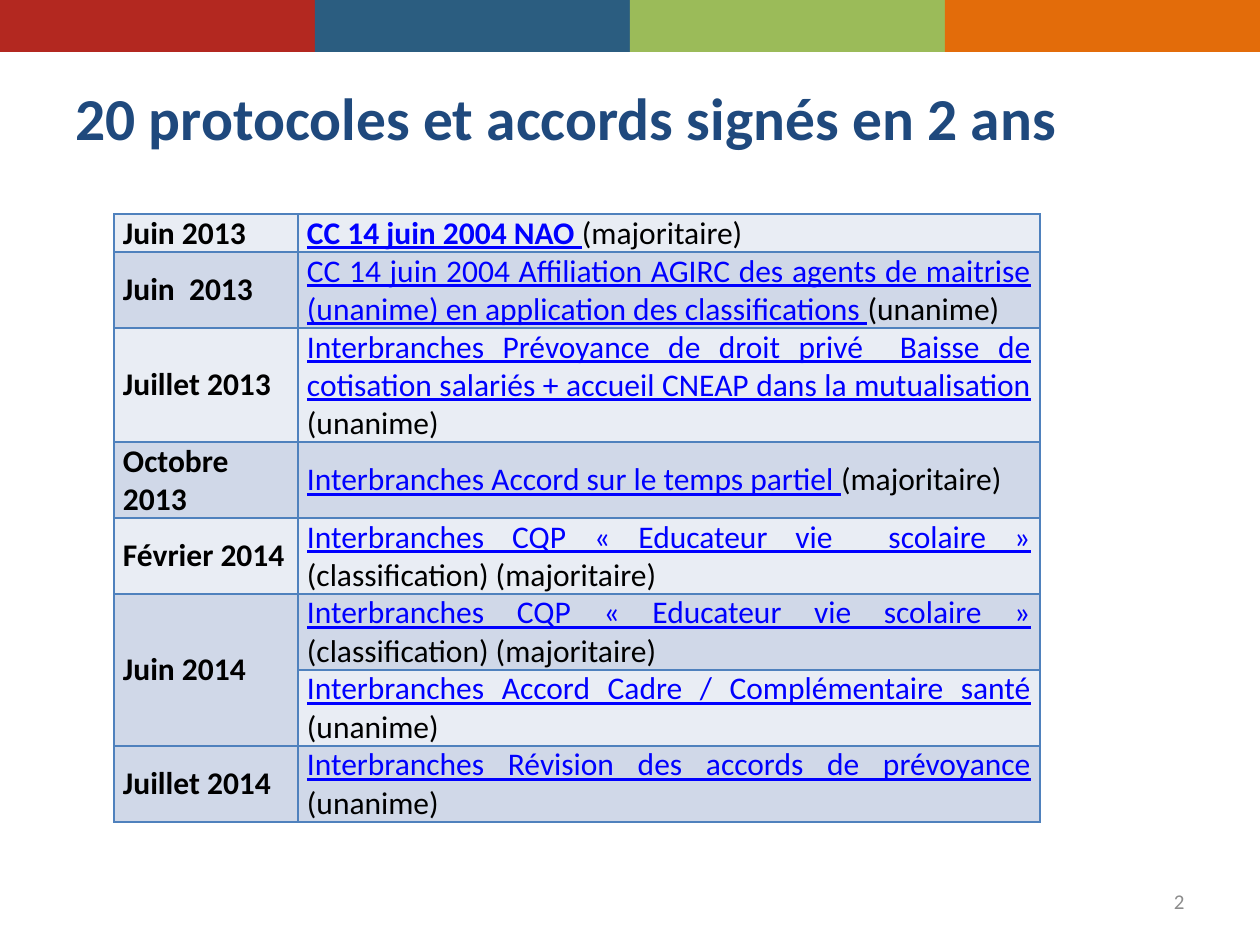
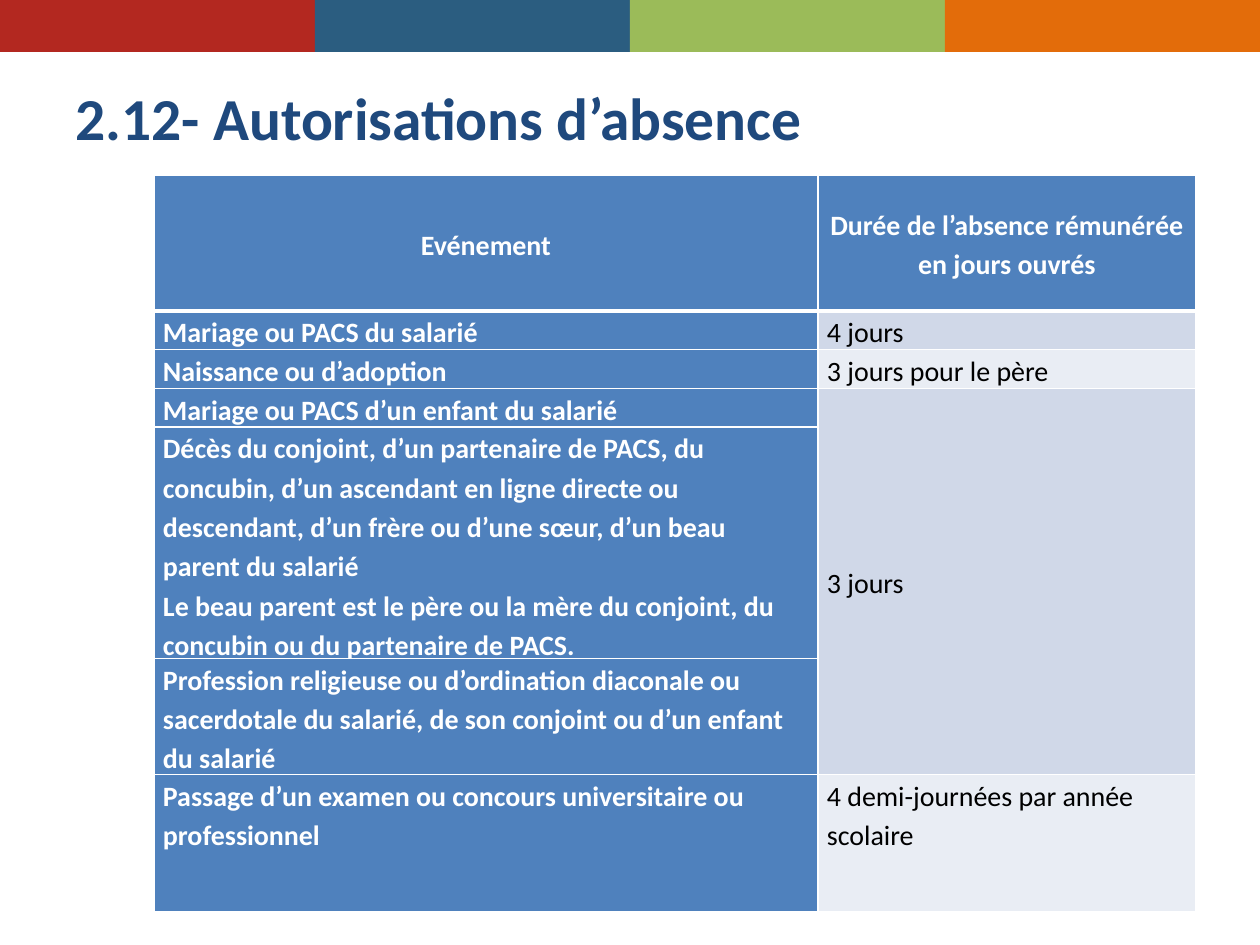
from lxml import etree
from pptx import Presentation
from pptx.dml.color import RGBColor
from pptx.enum.shapes import MSO_SHAPE
from pptx.enum.text import MSO_ANCHOR, PP_ALIGN
from pptx.oxml.ns import qn
from pptx.util import Pt

RECTANGLE = MSO_SHAPE.RECTANGLE
TOP, MIDDLE = MSO_ANCHOR.TOP, MSO_ANCHOR.MIDDLE
LEFT, CENTER, RIGHT = PP_ALIGN.LEFT, PP_ALIGN.CENTER, PP_ALIGN.RIGHT
JUSTIFY = PP_ALIGN.JUSTIFY

PX = 914400 / 126
FONT = "Calibri"
NAVY, BLUE, LINK = "1F497D", "4F81BD", "0000FF"
BLACK, WHITE, GREY = "000000", "FFFFFF", "8C8C8C"
PALE, TINT = "E9EDF4", "D0D8E8"
BANDS = ["B32820", "2B5D80", "9BBB59", "E36C0A"]
CELL_INSET = 9


def add_span(para, text, size, colour, bold=False, underline=None):
    span = para.add_run()
    span.text = text
    span.font.name = FONT
    span.font.size = Pt(size)
    span.font.bold = bold
    span.font.underline = underline
    span.font.color.rgb = RGBColor.from_string(colour)


def style_cell(cell, fill, border, top=1, bottom=1):
    """Set fill, insets and borders; top and bottom are line widths in points."""
    cell.margin_left = cell.margin_right = round(CELL_INSET * PX)
    cell.margin_top = cell.margin_bottom = 0
    cell.vertical_anchor = MIDDLE
    properties = cell._tc.get_or_add_tcPr()
    for side, width in (("L", 1), ("R", 1), ("T", top), ("B", bottom)):
        line = etree.SubElement(properties, qn(f"a:ln{side}"), w=str(Pt(width)))
        solid = etree.SubElement(line, qn("a:solidFill"))
        etree.SubElement(solid, qn("a:srgbClr"), val=border)
    cell.fill.solid()
    cell.fill.fore_color.rgb = RGBColor.from_string(fill)


deck = Presentation()
deck.slide_width, deck.slide_height = round(1260 * PX), round(945 * PX)

# Title, colour bands and an empty table on each page
layouts = [
    ("20 protocoles et accords signés en 2 ans", 114, 214,
     [184, 742], [38 * lines for lines in (1, 2, 3, 2, 2, 2, 2, 2)]),
    ("2.12- Autorisations d’absence", 154, 175,
     [664, 378], [136, 35, 35, 35, 212, 106, 137]),
]
tables = []
for title, left, top, widths, heights in layouts:
    page = deck.slides.add_slide(deck.slide_layouts[6])

    band_group = page.shapes.add_group_shape()
    for index, colour in enumerate(BANDS):
        band = band_group.shapes.add_shape(
            RECTANGLE, round(315 * index * PX), round(-4 * PX),
            round(315 * PX), round(56 * PX))
        band.shadow.inherit = False
        band.fill.solid()
        band.fill.fore_color.rgb = RGBColor.from_string(colour)
        band.line.fill.background()

    box = page.shapes.add_textbox(
        round(63 * PX), round(38 * PX), round(1134 * PX), round(158 * PX))
    box.text_frame.word_wrap = True
    box.text_frame.vertical_anchor = MIDDLE
    add_span(box.text_frame.paragraphs[0], title, 34, NAVY, bold=True)

    table = page.shapes.add_table(
        len(heights), len(widths), round(left * PX), round(top * PX),
        round(sum(widths) * PX), round(sum(heights) * PX)).table
    table.first_row = table.horz_banding = False
    for column, width in zip(table.columns, widths):
        column.width = round(width * PX)
    for row, height in zip(table.rows, heights):
        row.height = round(height * PX)
    tables.append(table)

# Page 1: signed agreements
agreements = [
    ("Juin 2013", "CC 14 juin 2004 NAO ", "(majoritaire)"),
    ("Juin  2013", "CC 14 juin 2004 Affiliation AGIRC des agents de maitrise "
     "(unanime) en application des classifications ", "(unanime)"),
    ("Juillet 2013", "Interbranches Prévoyance de droit privé  Baisse de cotisation "
     "salariés + accueil CNEAP dans la mutualisation ", "(unanime)"),
    ("Octobre 2013", "Interbranches Accord sur le temps partiel ", "(majoritaire)"),
    ("Février 2014", "Interbranches CQP « Educateur vie  scolaire » ",
     "(classification) (majoritaire)"),
    ("Juin 2014", "Interbranches CQP « Educateur vie scolaire » ",
     "(classification) (majoritaire)"),
    ("", "Interbranches Accord Cadre / Complémentaire santé ", "(unanime)"),
    ("Juillet 2014", "Interbranches Révision des accords de prévoyance ", "(unanime)"),
]
table = tables[0]
for index, (date, agreement, vote) in enumerate(agreements):
    date_cell, agreement_cell = table.cell(index, 0), table.cell(index, 1)
    for cell in (date_cell, agreement_cell):
        style_cell(cell, TINT if index % 2 else PALE, BLUE)
        para = cell.text_frame.paragraphs[0]
        para.alignment = JUSTIFY
        para.space_before = para.space_after = Pt(3)
    if date:
        add_span(date_cell.text_frame.paragraphs[0], date, 18, BLACK, bold=True)
    para = agreement_cell.text_frame.paragraphs[0]
    add_span(para, agreement, 18, LINK, bold=index == 0, underline=True)
    add_span(para, vote, 18, BLACK)
table.cell(5, 0).merge(table.cell(6, 0))

number = deck.slides[0].shapes.add_textbox(
    round(903 * PX), round(876 * PX), round(294 * PX), round(50 * PX))
number.text_frame.word_wrap = True
number.text_frame.vertical_anchor = MIDDLE
number.text_frame.paragraphs[0].alignment = RIGHT
add_span(number.text_frame.paragraphs[0], "2", 12, GREY)

# Page 2: paid leave by event
absences = [
    (["Evénement"], "Durée de l’absence rémunérée en jours ouvrés", BLUE),
    (["Mariage ou PACS du salarié"], "4 jours", TINT),
    (["Naissance ou d’adoption"], "3 jours pour le père", PALE),
    (["Mariage ou PACS d’un enfant du salarié"], "3 jours", TINT),
    (["Décès du conjoint, d’un partenaire de PACS, du concubin, d’un ascendant en "
      "ligne directe ou descendant, d’un frère ou d’une sœur, d’un beau parent du salarié",
      "Le beau parent est le père ou la mère du conjoint, du concubin ou du "
      "partenaire de PACS."], "", TINT),
    (["Profession religieuse ou d’ordination diaconale ou sacerdotale du salarié, "
      "de son conjoint ou d’un enfant du salarié"], "", TINT),
    (["Passage d’un examen ou concours universitaire ou professionnel"],
     "4 demi-journées par année scolaire", PALE),
]
table = tables[1]
for index, (event, duration, duration_fill) in enumerate(absences):
    header = index == 0
    for column, (texts, fill) in enumerate([(event, BLUE), ([duration], duration_fill)]):
        cell = table.cell(index, column)
        style_cell(cell, fill, WHITE, top=3 if index == 1 else 1, bottom=3 if header else 1)
        if index == len(absences) - 1:
            cell.vertical_anchor = TOP
        strong = header or column == 0
        for position, text in enumerate(texts):
            frame = cell.text_frame
            para = frame.add_paragraph() if position else frame.paragraphs[0]
            para.alignment = CENTER if header else LEFT
            para.line_spacing = 1.15
            if text:
                add_span(para, text, 16, WHITE if strong else BLACK, bold=strong)
table.cell(3, 1).merge(table.cell(5, 1))

deck.save("out.pptx")
